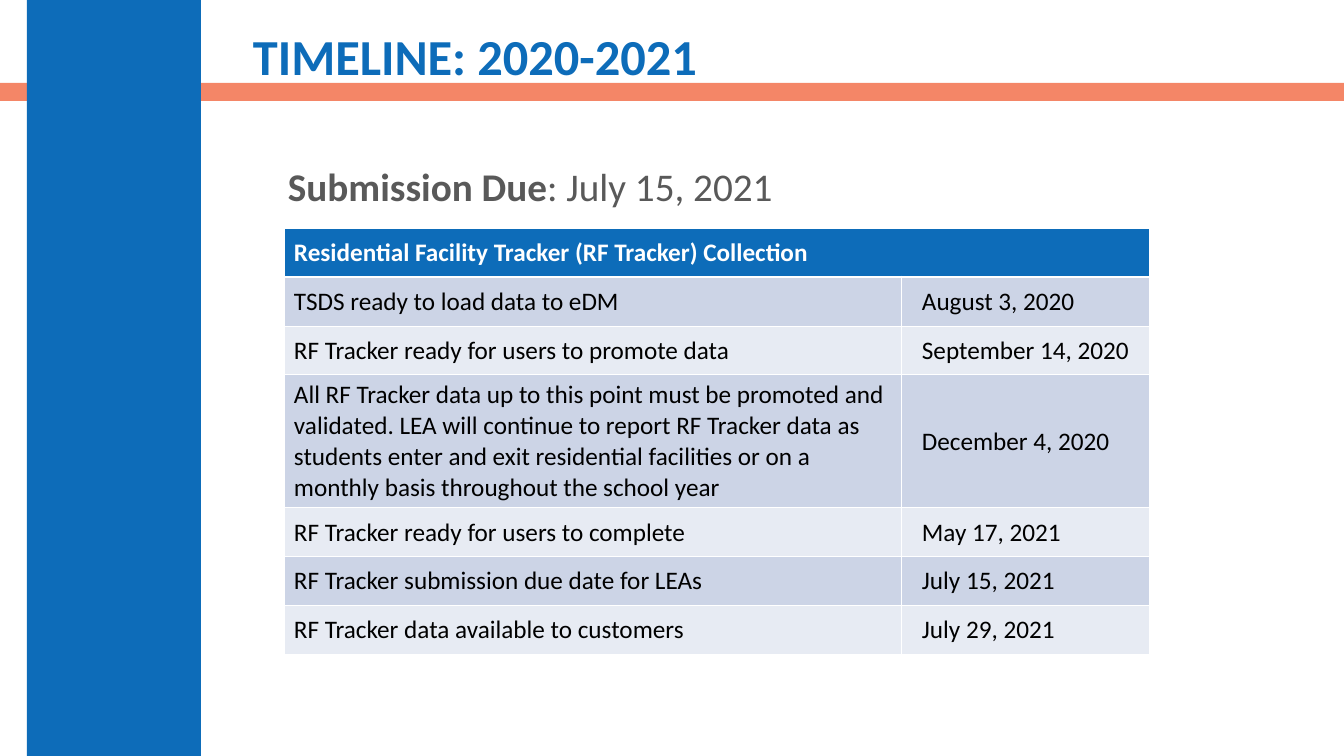
from typing import NamedTuple

from lxml.etree import SubElement
from pptx import Presentation
from pptx.dml.color import RGBColor
from pptx.enum.shapes import MSO_SHAPE as Shape
from pptx.enum.text import MSO_ANCHOR as Anchor
from pptx.oxml.ns import qn
from pptx.util import Emu, Inches, Pt

WIDE, HIGH = 1344, 756
SCALE = Inches(7.5) / HIGH
FONT = "Calibri"
BLUE, CORAL, GREY = "0D6CB9", "F16038", "595959"
WHITE, BLACK = "FFFFFF", "000000"
BANDS = ("E7EBF3", "CCD4E6")


class Box(NamedTuple):
    left: int
    top: int
    width: int
    height: int


class Bar(NamedTuple):
    box: Box
    color: str
    alpha: int = 100


class Step(NamedTuple):
    task: str
    date: str
    height: int = 49


BARS = (
    Bar(Box(0, 83, WIDE, 18), CORAL, 76),
    Bar(Box(27, 0, 174, HIGH), BLUE),
)
HEAD = Step("Residential Facility Tracker (RF Tracker) Collection", "")
STEPS = (
    Step("TSDS ready to load data to eDM", "August 3, 2020"),
    Step("RF Tracker ready for users to promote data", "September 14, 2020"),
    Step("All RF Tracker data up to this point must be promoted and validated. "
         "LEA will continue to report RF Tracker data as students enter and exit "
         "residential facilities or on a monthly basis throughout the school year",
         "December 4, 2020", 133),
    Step("RF Tracker ready for users to complete", "May 17, 2021"),
    Step("RF Tracker submission due date for LEAs", "July 15, 2021"),
    Step("RF Tracker data available to customers", "July 29, 2021"),
)


def px(size: int) -> Emu:
    return Emu(round(size * SCALE))


def place(box: Box) -> list[Emu]:
    return [px(size) for size in box]


def paint(fill, color: str) -> None:
    fill.solid()
    fill.fore_color.rgb = RGBColor.from_string(color)


def write(line, text: str, *, size: int, color: str, bold: bool = False) -> None:
    run = line.add_run()
    run.text = text
    run.font.name, run.font.size, run.font.bold = FONT, Pt(size), bold
    run.font.color.rgb = RGBColor.from_string(color)


def add_bar(slide, bar: Bar) -> None:
    shape = slide.shapes.add_shape(Shape.RECTANGLE, *place(bar.box))
    shape.shadow.inherit = False
    shape.line.fill.background()
    paint(shape.fill, bar.color)
    if bar.alpha < 100:
        tint = shape.fill._xPr.find(".//" + qn("a:srgbClr"))
        SubElement(tint, qn("a:alpha"), val=str(bar.alpha * 1000))


def add_text(slide, box: Box, anchor: Anchor, inset: int = 10):
    frame = slide.shapes.add_textbox(*place(box)).text_frame
    frame.word_wrap = True
    frame.vertical_anchor = anchor
    frame.margin_left = px(inset)
    line = frame.paragraphs[0]
    line.line_spacing = 0.9
    return line


def edge(cell, side: str, width: float) -> None:
    rule = SubElement(cell._tc.get_or_add_tcPr(), qn("a:ln" + side), w=str(Pt(width)))
    fill = SubElement(rule, qn("a:solidFill"))
    SubElement(fill, qn("a:srgbClr"), val=WHITE)


def add_table(slide, box: Box, widths: tuple[int, ...]) -> None:
    rows = (HEAD, *STEPS)
    table = slide.shapes.add_table(len(rows), len(widths), *place(box)).table
    table.first_row = table.horz_banding = False
    for col, width in zip(table.columns, widths):
        col.width = px(width)
    for i, step in enumerate(rows):
        table.rows[i].height = px(step.height)
        head = i == 0
        for j, text in enumerate((step.task, step.date)):
            cell = table.cell(i, j)
            # Borders come before the fill in a cell
            for side in "LRTB":
                thick = head and side == "B" or i == 1 and side == "T"
                edge(cell, side, 2.16 if thick else 0.72)
            paint(cell.fill, BLUE if head else BANDS[i % 2])
            cell.vertical_anchor = Anchor.MIDDLE
            cell.margin_left = px(21 if j else 10)
            if text:
                write(cell.text_frame.paragraphs[0], text, size=18,
                      color=WHITE if head else BLACK, bold=head)
    table.cell(0, 0).merge(table.cell(0, 1))


def main() -> None:
    deck = Presentation()
    deck.slide_width, deck.slide_height = px(WIDE), px(HIGH)
    slide = deck.slides.add_slide(deck.slide_layouts[6])

    # Stripe and side bar
    for bar in BARS:
        add_bar(slide, bar)

    # Title
    line = add_text(slide, Box(243, 18, 1061, 83), Anchor.MIDDLE)
    write(line, "TIMELINE: 2020-2021", size=36, color=BLUE, bold=True)

    # Due date
    line = add_text(slide, Box(243, 163, 991, 50), Anchor.TOP, inset=45)
    write(line, "Submission Due", size=28, color=GREY, bold=True)
    write(line, ": July 15, 2021", size=28, color=GREY)

    # Timeline table
    tall = sum(step.height for step in (HEAD, *STEPS))
    add_table(slide, Box(284, 228, 865, tall), (617, 248))
    deck.save("out.pptx")


if __name__ == "__main__":
    main()
